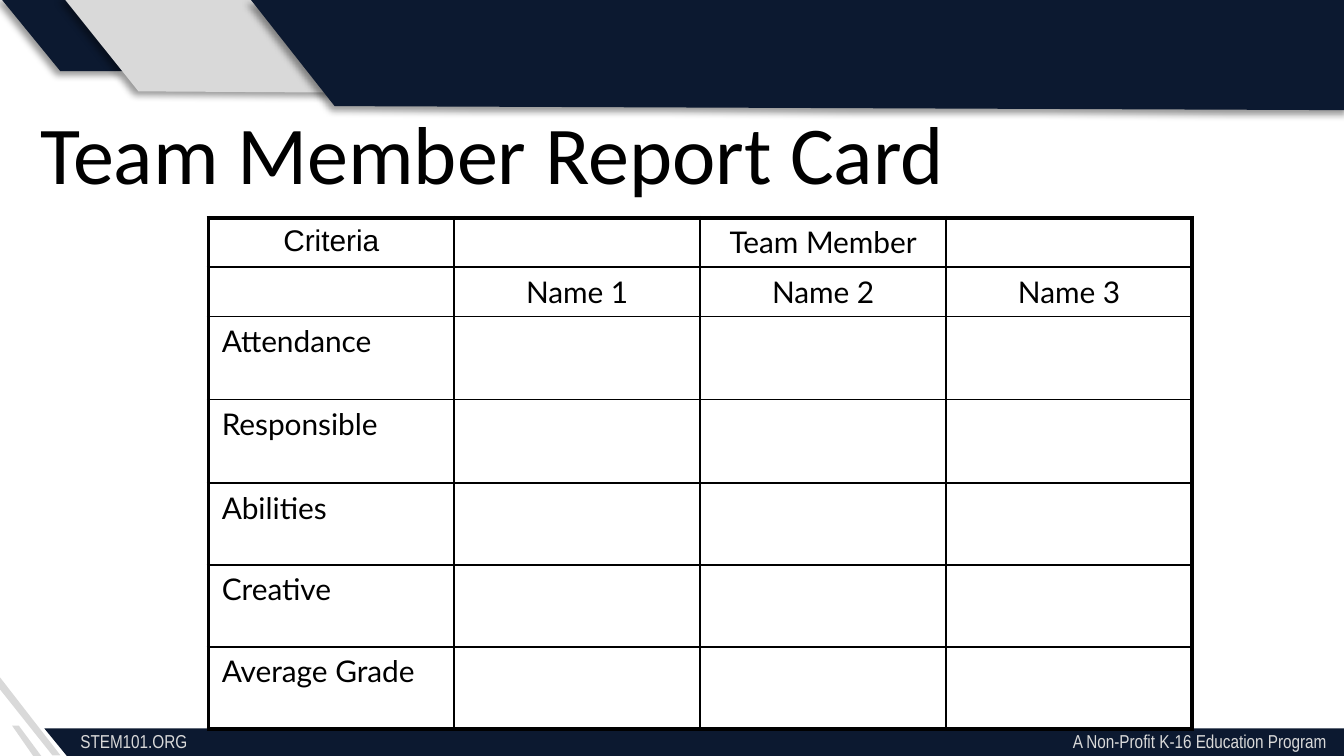
"""Build the team member report card slide."""
from typing import NamedTuple

from lxml import etree
from pptx import Presentation
from pptx.dml.color import RGBColor
from pptx.enum.text import MSO_ANCHOR as Anchor, PP_ALIGN as Align
from pptx.oxml import parse_xml
from pptx.oxml.ns import nsdecls, qn
from pptx.util import Inches, Pt

NAVY = RGBColor(0x0C, 0x19, 0x30)
GREY = RGBColor(0xD9, 0xD9, 0xD9)
BLACK = RGBColor(0, 0, 0)

SLIDE_WIDTH = 10
SLIDE_HEIGHT = SLIDE_WIDTH * 9 / 16
THIN, THICK = 1, 2.25
COLUMN_WIDTH = 1.83
ROW_HEIGHTS = [0.34] * 2 + [0.62] * 2 + [0.61] * 3
HEADERS = [["Criteria", "", "Team Member", ""], ["", "Name 1", "Name 2", "Name 3"]]
CRITERIA = ["Attendance", "Responsible", "Abilities", "Creative", "Average Grade"]


class Band(NamedTuple):
    points: list[tuple[float, float]]
    color: RGBColor
    shadow: bool = False


BANDS = [
    Band([(0.45, 0.53), (0, -0.02), (0.48, -0.02), (0.93, 0.53)], NAVY, True),
    Band([(1.03, 0.68), (0.47, -0.02), (2.04, -0.02), (2.59, 0.69)], GREY, True),
    Band([(0.31, 5.63), (0.25, 5.63), (0.09, 5.4), (0.14, 5.4)], GREY),
    Band([(0.45, 5.62), (0.39, 5.62), (0, 5.13), (0, 5.04)], GREY),
    Band([(2.49, 0.79), (1.86, -0.01), (10.02, -0.01), (10.04, 0.82)], NAVY, True),
    Band([(10.06, 5.65), (0.51, 5.64), (0.33, 5.42), (10.07, 5.42)], NAVY),
]


def draw_band(slide, band: Band) -> None:
    points = [(Inches(x), Inches(y)) for x, y in band.points]
    builder = slide.shapes.build_freeform(*points[0], scale=1.0)
    builder.add_line_segments(points[1:], close=True)
    shape = builder.convert_to_shape()
    shape.fill.solid()
    shape.fill.fore_color.rgb = band.color
    shape.line.fill.background()
    shape.shadow.inherit = False
    if band.shadow:
        effects = shape._element.spPr.find(qn("a:effectLst"))
        effects.append(parse_xml(
            f'<a:outerShdw {nsdecls("a")} blurRad="{Pt(4)}" dist="{Pt(3)}" dir="8100000" '
            'algn="tr" rotWithShape="0"><a:srgbClr val="000000"><a:alpha val="40000"/>'
            '</a:srgbClr></a:outerShdw>'))


def draw_footer(slide, left_text: str, right_text: str) -> None:
    box = slide.shapes.add_textbox(Inches(0.5), Inches(5.38), Inches(9.5), Inches(0.27))
    box.text_frame.word_wrap = True
    paragraph = box.text_frame.paragraphs[0]
    paragraph.text = f"{left_text}\t{right_text}"
    tabs = etree.SubElement(paragraph._p.get_or_add_pPr(), qn("a:tabLst"))
    etree.SubElement(tabs, qn("a:tab"), pos=str(Inches(9.27)), algn="r")
    paragraph.font.name = "Arial Narrow"
    paragraph.font.size = Pt(10)
    paragraph.font.color.rgb = GREY


def draw_title(slide, text: str) -> None:
    title = slide.shapes.title
    title.left, title.top = Inches(0.2), Inches(0.71)
    title.width, title.height = Inches(9.57), Inches(0.84)
    title.text_frame.vertical_anchor = Anchor.TOP
    paragraph = title.text_frame.paragraphs[0]
    paragraph.text = text
    paragraph.alignment = Align.LEFT
    paragraph.font.name = "Calibri"
    paragraph.font.size = Pt(44)
    paragraph.font.color.rgb = BLACK


def set_borders(cell, widths: dict[str, float]) -> None:
    properties = cell._tc.get_or_add_tcPr()
    for index, (side, width) in enumerate(widths.items()):
        line = etree.Element(qn(f"a:ln{side}"), w=str(Pt(width)))
        fill = etree.SubElement(line, qn("a:solidFill"))
        etree.SubElement(fill, qn("a:srgbClr"), val=str(BLACK))
        properties.insert(index, line)


def fill_cell(cell, text: str, align: Align, font_name: str) -> None:
    cell.fill.background()
    paragraph = cell.text_frame.paragraphs[0]
    paragraph.alignment = align
    if text:
        paragraph.text = text
        paragraph.font.name = font_name
        paragraph.font.size = Pt(16)
        paragraph.font.color.rgb = BLACK
    else:
        etree.SubElement(paragraph._p, qn("a:endParaRPr"), sz="1600")


def draw_report_card(slide) -> None:
    rows = HEADERS + [[name, "", "", ""] for name in CRITERIA]
    last_row, last_column = len(rows) - 1, len(rows[0]) - 1
    frame = slide.shapes.add_table(
        len(rows), len(rows[0]), Inches(1.55), Inches(1.62),
        Inches(COLUMN_WIDTH * len(rows[0])), Inches(sum(ROW_HEIGHTS)))
    table = frame.table
    table.first_row = table.horz_banding = False
    for column in table.columns:
        column.width = Inches(COLUMN_WIDTH)
    for row_index, (texts, height) in enumerate(zip(rows, ROW_HEIGHTS)):
        table.rows[row_index].height = Inches(height)
        align = Align.CENTER if row_index < len(HEADERS) else Align.LEFT
        for column_index, text in enumerate(texts):
            cell = table.cell(row_index, column_index)
            fill_cell(cell, text, align, "Arial" if text == "Criteria" else "Lato")
            set_borders(cell, {
                "L": THICK if column_index == 0 else THIN,
                "R": THICK if column_index == last_column else THIN,
                "T": THICK if row_index == 0 else THIN,
                "B": THICK if row_index == last_row else THIN,
            })
    frame.height = Inches(3.88)


def main() -> None:
    presentation = Presentation()
    presentation.slide_width = Inches(SLIDE_WIDTH)
    presentation.slide_height = Inches(SLIDE_HEIGHT)
    slide = presentation.slides.add_slide(presentation.slide_layouts[5])
    for band in BANDS:
        draw_band(slide, band)
    draw_footer(slide, "STEM101.ORG", "A Non-Profit K-16 Education Program")
    draw_title(slide, "Team Member Report Card")
    draw_report_card(slide)
    presentation.save("out.pptx")


if __name__ == "__main__":
    main()
